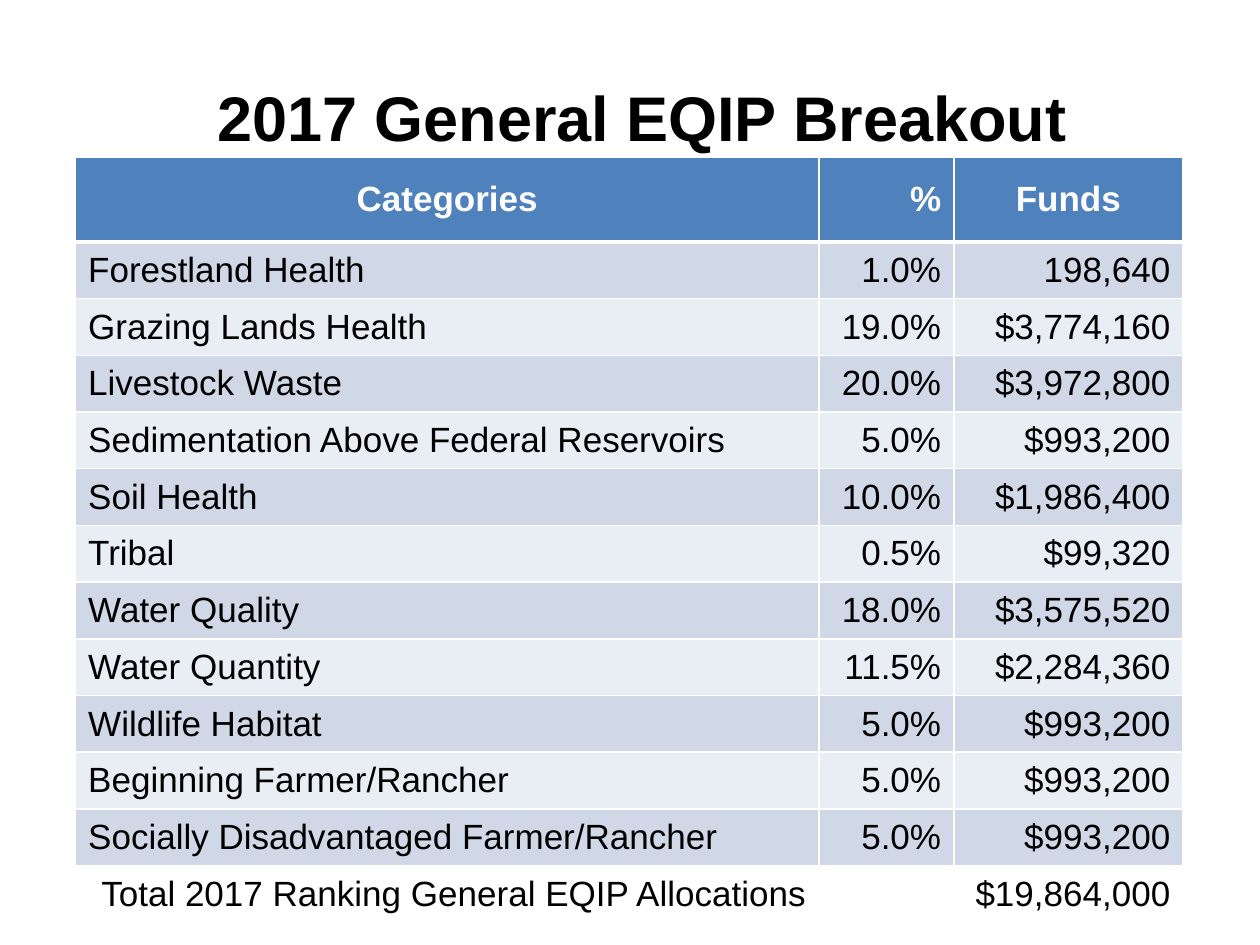
from dataclasses import dataclass

import lxml.etree
import pptx
import pptx.dml.color
import pptx.enum.text
import pptx.oxml.ns
import pptx.util
from pptx.util import Inches

RGBColor = pptx.dml.color.RGBColor
Align = pptx.enum.text.PP_ALIGN
Anchor = pptx.enum.text.MSO_ANCHOR

BLACK = RGBColor(0x00, 0x00, 0x00)
WHITE = RGBColor(0xFF, 0xFF, 0xFF)
HEADER_BLUE = RGBColor(0x4F, 0x81, 0xBD)
BAND_COLORS = (RGBColor(0xD0, 0xD8, 0xE8), RGBColor(0xE9, 0xED, 0xF4))

FONT = "Arial"
COLUMN_WIDTHS = (5.9, 1.07, 1.82)
HEADER_HEIGHT = 0.67
ROW_HEIGHT = 0.45
THIN, THICK = 1, 3


@dataclass(frozen=True)
class FundRow:
    category: str
    percent: str
    funds: str


@dataclass(frozen=True)
class RowStyle:
    fill: RGBColor
    aligns: tuple
    color: RGBColor = BLACK
    bold: bool = False
    top: int = THIN
    bottom: int = THIN


HEADER = FundRow("Categories", "%", "Funds")
FUND_ROWS = [
    FundRow("Forestland Health", "1.0%", "198,640"),
    FundRow("Grazing Lands Health", "19.0%", "$3,774,160"),
    FundRow("Livestock Waste", "20.0%", "$3,972,800"),
    FundRow("Sedimentation Above Federal Reservoirs", "5.0%", "$993,200"),
    FundRow("Soil Health", "10.0%", "$1,986,400"),
    FundRow("Tribal", "0.5%", "$99,320"),
    FundRow("Water Quality", "18.0%", "$3,575,520"),
    FundRow("Water Quantity", "11.5%", "$2,284,360"),
    FundRow("Wildlife Habitat", "5.0%", "$993,200"),
    FundRow("Beginning Farmer/Rancher", "5.0%", "$993,200"),
    FundRow("Socially Disadvantaged Farmer/Rancher", "5.0%", "$993,200"),
]
TOTAL = FundRow("Total 2017 Ranking General EQIP Allocations", "", "$19,864,000")


def write_text(frame, text: str, size: int, color: RGBColor, bold: bool, align) -> None:
    para = frame.paragraphs[0]
    para.text = text
    para.alignment = align
    para.font.name = FONT
    para.font.size = pptx.util.Pt(size)
    para.font.bold = bold
    para.font.color.rgb = color


def add_borders(cell, top: int, bottom: int) -> None:
    """Draw white cell borders; call before filling, as the schema puts lines first."""
    properties = cell._tc.get_or_add_tcPr()
    qn = pptx.oxml.ns.qn
    for side, width in (("L", THIN), ("R", THIN), ("T", top), ("B", bottom)):
        line = lxml.etree.SubElement(
            properties, qn(f"a:ln{side}"), w=str(pptx.util.Pt(width))
        )
        fill = lxml.etree.SubElement(line, qn("a:solidFill"))
        lxml.etree.SubElement(fill, qn("a:srgbClr"), val=str(WHITE))


def fill_row(cells, row: FundRow, style: RowStyle) -> None:
    texts = (row.category, row.percent, row.funds)
    for cell, text, align in zip(cells, texts, style.aligns):
        add_borders(cell, style.top, style.bottom)
        cell.fill.solid()
        cell.fill.fore_color.rgb = style.fill
        cell.vertical_anchor = Anchor.MIDDLE
        write_text(cell.text_frame, text, 20, style.color, style.bold, align)


def add_title(page) -> None:
    box = page.shapes.add_textbox(Inches(0.69), Inches(0.3), Inches(8.81), Inches(1.25))
    box.text_frame.word_wrap = True
    box.text_frame.vertical_anchor = Anchor.MIDDLE
    write_text(box.text_frame, "2017 General EQIP Breakout", 36, BLACK, True, Align.CENTER)


def add_fund_table(page) -> None:
    body_aligns = (Align.LEFT, Align.RIGHT, Align.RIGHT)
    styled_rows = [
        (HEADER, RowStyle(HEADER_BLUE, (Align.CENTER, Align.RIGHT, Align.CENTER),
                          WHITE, bold=True, bottom=THICK))
    ]
    for index, row in enumerate(FUND_ROWS):
        top = THICK if index == 0 else THIN
        styled_rows.append((row, RowStyle(BAND_COLORS[index % 2], body_aligns, top=top)))
    styled_rows.append((TOTAL, RowStyle(WHITE, (Align.RIGHT,) * 3)))

    height = HEADER_HEIGHT + ROW_HEIGHT * (len(styled_rows) - 1)
    table = page.shapes.add_table(
        len(styled_rows), len(COLUMN_WIDTHS),
        Inches(0.6), Inches(1.25), Inches(sum(COLUMN_WIDTHS)), Inches(height),
    ).table
    table.horz_banding = False
    for column, width in zip(table.columns, COLUMN_WIDTHS):
        column.width = Inches(width)
    for index, (table_row, (row, style)) in enumerate(zip(table.rows, styled_rows)):
        table_row.height = Inches(ROW_HEIGHT if index else HEADER_HEIGHT)
        fill_row(table_row.cells, row, style)


def main() -> None:
    deck = pptx.Presentation()
    deck.slide_width = Inches(10)
    deck.slide_height = Inches(7.5)
    page = deck.slides.add_slide(deck.slide_layouts[6])
    add_title(page)
    add_fund_table(page)
    deck.save("out.pptx")


if __name__ == "__main__":
    main()
